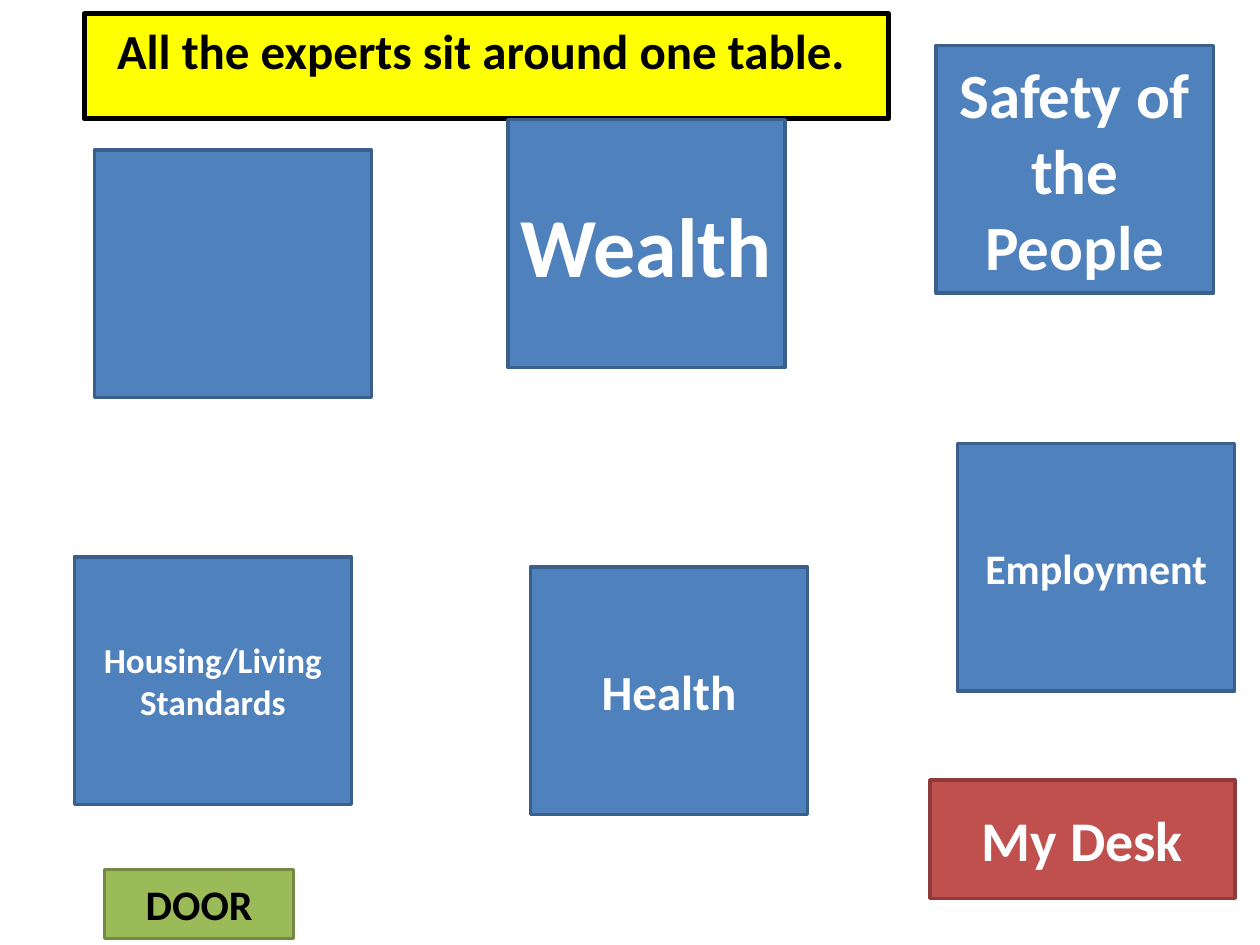
from pptx import Presentation
from pptx.dml.color import RGBColor
from pptx.enum.shapes import MSO_SHAPE
from pptx.enum.text import MSO_ANCHOR, MSO_AUTO_SIZE, PP_ALIGN
from pptx.util import Pt

# Content: text, left, top, font size
TABLE_SIZE = (158.4, 141.6)
TABLES = [
    ("Housing/Living Standards", 42.5, 318.2, 20),
    ("", 54, 85.7, 18),
    ("Wealth", 290.2, 68.4, 48),
    ("Safety of the People", 535, 25.9, 36),
    ("Employment", 547.2, 253.4, 24),
    ("Health", 303.1, 324, 28),
]
# Content: text, box, font size, fill, line, font colour
LANDMARKS = [
    ("My Desk", (531.4, 445.7, 174.2, 67.7), 32, "C0504D", "8E3B39", "FFFFFF"),
    ("DOOR", (59.8, 496.8, 108, 39.6), 24, "9BBB59", "738A42", "000000"),
]
TITLE = "All the experts sit around one table. "
TITLE_BOX = (48.2, 7.9, 459.4, 41)


def paint(color, value):
    color.rgb = RGBColor.from_string(value)


def set_text(sp, text, size=18, color="FFFFFF", anchor=MSO_ANCHOR.MIDDLE):
    tf = sp.text_frame
    tf.word_wrap = True
    tf.vertical_anchor = anchor
    p = tf.paragraphs[0]
    p.alignment = PP_ALIGN.CENTER
    r = p.add_run()
    r.text = text
    r.font.name, r.font.size, r.font.bold = "Calibri", Pt(size), True
    paint(r.font.color, color)


def style_box(sp, fill, line, width=2):
    sp.fill.solid()
    paint(sp.fill.fore_color, fill)
    paint(sp.line.color, line)
    sp.line.width = Pt(width)


def add_box(s, text, box, size, fill="4F81BD", line="3A5F8C", color="FFFFFF"):
    sp = s.shapes.add_shape(MSO_SHAPE.RECTANGLE, *map(Pt, box))
    sp.shadow.inherit = False
    style_box(sp, fill, line)
    if text:
        set_text(sp, text, size=size, color=color)


prs = Presentation()
prs.slide_width, prs.slide_height = Pt(720), Pt(540)
s = prs.slides.add_slide(prs.slide_layouts[5])

# Title banner
title = s.shapes.title
title.left, title.top, title.width, title.height = map(Pt, TITLE_BOX)
style_box(title, "FFFF00", "000000", width=3)
set_text(title, TITLE, size=28, color="000000", anchor=MSO_ANCHOR.TOP)
title.text_frame.auto_size = MSO_AUTO_SIZE.SHAPE_TO_FIT_TEXT

# Expert tables
for text, left, top, size in TABLES:
    add_box(s, text, (left, top, *TABLE_SIZE), size)

# Desk and door
for landmark in LANDMARKS:
    add_box(s, *landmark)

prs.save("out.pptx")
